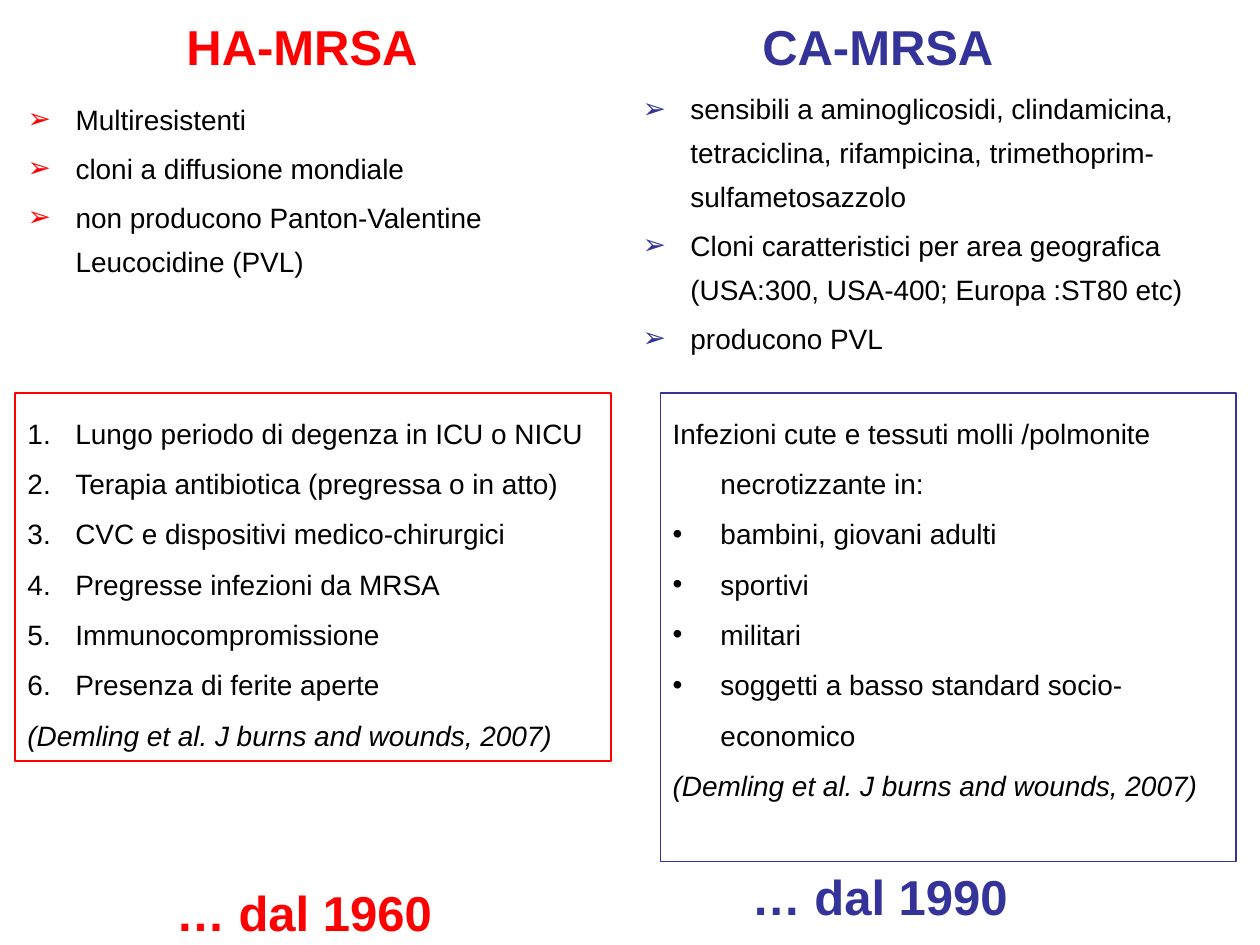
from dataclasses import dataclass
from typing import Optional

from lxml.etree import SubElement
from pptx import Presentation
from pptx.dml.color import RGBColor
from pptx.enum.shapes import MSO_SHAPE
from pptx.enum.text import MSO_ANCHOR, MSO_AUTO_SIZE, PP_ALIGN
from pptx.oxml.ns import qn
from pptx.util import Inches, Pt


@dataclass(frozen=True)
class Theme:
    font: str = "Arial"
    text: RGBColor = RGBColor(0x00, 0x00, 0x00)
    hospital: RGBColor = RGBColor(0xFF, 0x00, 0x00)
    community: RGBColor = RGBColor(0x33, 0x33, 0x99)
    heading_size: int = 28
    body_size: int = 16
    outline: float = 0.75
    indent: float = 0.38


THEME = Theme()
ARROW, DOT, NUMBER = "➢", "•", "1."
CITATION = "(Demling et al. J burns and wounds, 2007)"


@dataclass(frozen=True)
class Area:
    left: float
    top: float
    width: float
    height: float

    def lengths(self) -> tuple:
        return tuple(map(Inches, (self.left, self.top, self.width, self.height)))


@dataclass(frozen=True)
class Item:
    text: str
    bullet: Optional[str] = None
    italic: bool = False


@dataclass(frozen=True)
class Column:
    color: RGBColor
    heading: str
    heading_area: Area
    heading_idx: int
    traits: list[str]
    traits_area: Area
    traits_idx: int
    risks: list[Item]
    risks_area: Area
    since: str
    since_area: Area


COLUMNS = [
    Column(
        THEME.hospital,
        "HA-MRSA", Area(1.38, 0.13, 2.04, 0.52), 1,
        ["Multiresistenti",
         "cloni a diffusione mondiale",
         "non producono Panton-Valentine Leucocidine (PVL)"],
        Area(0.12, 0.68, 5, 1.97), 2,
        [Item("Lungo periodo di degenza in ICU o NICU", NUMBER),
         Item("Terapia antibiotica (pregressa o in atto)", NUMBER),
         Item("CVC e dispositivi medico-chirurgici", NUMBER),
         Item("Pregresse infezioni da MRSA", NUMBER),
         Item("Immunocompromissione", NUMBER),
         Item("Presenza di ferite aperte", NUMBER),
         Item(CITATION, italic=True)],
        Area(0.12, 3.12, 4.73, 2.92),
        "… dal 1960", Area(1.3, 7.01, 2.24, 0.52),
    ),
    Column(
        THEME.community,
        "CA-MRSA", Area(5.95, 0.13, 2.04, 0.52), 3,
        ["sensibili a aminoglicosidi, clindamicina, tetraciclina, rifampicina, "
         "trimethoprim-sulfametosazzolo",
         "Cloni caratteristici per area geografica "
         "(USA:300, USA-400; Europa :ST80 etc)",
         "producono PVL"],
        Area(5, 0.6, 5, 2.36), 4,
        [Item("Infezioni cute e tessuti molli /polmonite necrotizzante in:"),
         Item("bambini, giovani adulti", DOT),
         Item("sportivi", DOT),
         Item("militari", DOT),
         Item("soggetti a basso standard socio-economico", DOT),
         Item(CITATION, italic=True)],
        Area(5.24, 3.12, 4.57, 3.72),
        "… dal 1990", Area(5.87, 6.88, 2.24, 0.52),
    ),
]


def place(shape, area: Area) -> None:
    shape.left, shape.top, shape.width, shape.height = area.lengths()


def set_bullet(paragraph, bullet: Optional[str], color: RGBColor) -> None:
    """Give the paragraph a hanging indent and its bullet or number, if any."""
    props = paragraph._p.get_or_add_pPr()
    props.set("marL", str(Inches(THEME.indent)))
    props.set("indent", str(-Inches(THEME.indent)))
    if bullet is None:
        SubElement(props, qn("a:buNone"))
        return
    bullet_color = SubElement(props, qn("a:buClr"))
    SubElement(bullet_color, qn("a:srgbClr"), val=str(color))
    SubElement(props, qn("a:buFont"), typeface=THEME.font)
    if bullet == NUMBER:
        SubElement(props, qn("a:buAutoNum"), type="arabicPeriod")
    else:
        SubElement(props, qn("a:buChar"), char=bullet)


def add_run(paragraph, text: str, size: int, color: RGBColor,
            bold: bool = False, italic: bool = False) -> None:
    run = paragraph.add_run()
    run.text = text
    font = run.font
    font.name, font.size = THEME.font, Pt(size)
    font.bold, font.italic = bold, italic
    font.color.rgb = color


def write_list(frame, items: list[Item], bullet_color: RGBColor,
               line_spacing: float, gap: float = 0) -> None:
    frame.word_wrap = True
    frame.auto_size = MSO_AUTO_SIZE.NONE
    frame.vertical_anchor = MSO_ANCHOR.TOP
    for index, item in enumerate(items):
        paragraph = frame.add_paragraph() if index else frame.paragraphs[0]
        set_bullet(paragraph, item.bullet, bullet_color)
        paragraph.alignment = PP_ALIGN.LEFT
        paragraph.line_spacing = line_spacing
        paragraph.space_before = Pt(gap if index else 0)
        add_run(paragraph, item.text, THEME.body_size, THEME.text, italic=item.italic)


def write_heading(frame, text: str, color: RGBColor) -> None:
    frame.word_wrap = False
    frame.auto_size = MSO_AUTO_SIZE.SHAPE_TO_FIT_TEXT
    frame.vertical_anchor = MSO_ANCHOR.TOP
    paragraph = frame.paragraphs[0]
    paragraph.line_spacing = 0.9
    paragraph.space_before = Pt(0)
    add_run(paragraph, text, THEME.heading_size, color, bold=True)


def draw_column(slide, column: Column) -> None:
    heading = slide.placeholders[column.heading_idx]
    place(heading, column.heading_area)
    write_heading(heading.text_frame, column.heading, column.color)

    traits = slide.placeholders[column.traits_idx]
    place(traits, column.traits_area)
    write_list(traits.text_frame, [Item(trait, ARROW) for trait in column.traits],
               column.color, line_spacing=1.3, gap=0.2 * THEME.body_size)

    risks = slide.shapes.add_shape(MSO_SHAPE.RECTANGLE, *column.risks_area.lengths())
    risks.shadow.inherit = False
    risks.fill.background()
    risks.line.color.rgb = column.color
    risks.line.width = Pt(THEME.outline)
    write_list(risks.text_frame, column.risks, THEME.text, line_spacing=1.5)

    since = slide.shapes.add_textbox(*column.since_area.lengths())
    write_heading(since.text_frame, column.since, column.color)


def main() -> None:
    deck = Presentation()
    deck.slide_width, deck.slide_height = Inches(10), Inches(7.5)
    comparison_layout = deck.slide_layouts[4]
    slide = deck.slides.add_slide(comparison_layout)
    unused_title = slide.shapes.title.element
    unused_title.getparent().remove(unused_title)
    for column in COLUMNS:
        draw_column(slide, column)
    deck.save("out.pptx")


if __name__ == "__main__":
    main()
